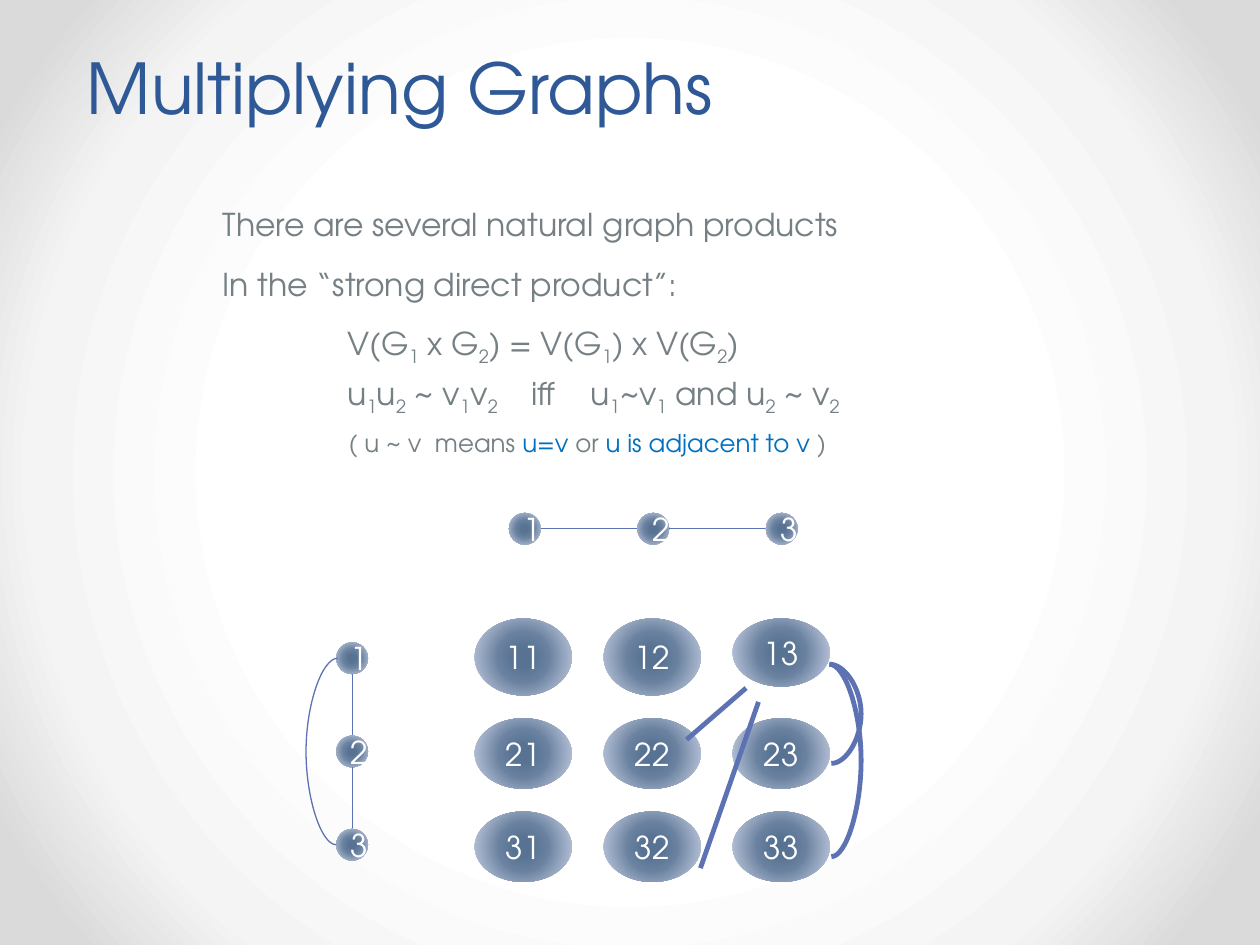
import pptx
import pptx.util
import pptx.dml.color
import pptx.enum.shapes
import pptx.enum.text
import pptx.oxml.ns
from lxml import etree
from pptx.util import Cm, Pt

qn = pptx.oxml.ns.qn
SHAPE = pptx.enum.shapes.MSO_SHAPE
CONNECTOR = pptx.enum.shapes.MSO_CONNECTOR
ALIGN = pptx.enum.text.PP_ALIGN
ANCHOR = pptx.enum.text.MSO_ANCHOR

FONT = "TeX Gyre Adventor"
COLORS = {"title": "2F5897", "text": "758085", "accent": "0070C0",
          "edge": "5C72B2", "node": "FFFFFF"}
BACKGROUND = [(50, "FFFFFF"), (76, "F4F4F4"), (92, "DADADA")]
NODE = [(15, "577293"), (40, "69819F"), (100, "CFD6E9")]


def rgb(name):
    return pptx.dml.color.RGBColor.from_string(COLORS[name])


class Deck:
    """Style of the deck and its current slide."""

    def __init__(self, s):
        self.s = s

    def radial(self, fill, element, stops):
        """Fill with a circular gradient that starts at the centre."""
        fill.gradient()
        grad = next(element.iter(qn("a:gradFill")))
        for child in list(grad):
            grad.remove(child)
        gs_list = etree.SubElement(grad, qn("a:gsLst"))
        for pos, color in stops:
            gs = etree.SubElement(gs_list, qn("a:gs"), pos=str(pos * 1000))
            etree.SubElement(gs, qn("a:srgbClr"), val=color)
        circle = etree.SubElement(grad, qn("a:path"), path="circle")
        etree.SubElement(circle, qn("a:fillToRect"),
                         dict.fromkeys("ltrb", "50000"))

    def font(self, p, size, color):
        p.font.name = FONT
        p.font.size = Pt(size)
        p.font.color.rgb = rgb(color)

    def title(self, text, x, y, w, h):
        sp = self.s.shapes.title
        sp.left, sp.top, sp.width, sp.height = Cm(x), Cm(y), Cm(w), Cm(h)
        tf = sp.text_frame
        tf.text = text
        tf.auto_size = pptx.enum.text.MSO_AUTO_SIZE.NONE
        tf.vertical_anchor = ANCHOR.BOTTOM
        p = tf.paragraphs[0]
        p.alignment = ALIGN.CENTER
        p.line_spacing = Pt(58)
        self.font(p, 40, "title")

    def text(self, text, x, y, w, h=1.02, size=18, accent=False, tabs=()):
        """One line; parts between underscores are subscripts or accented."""
        sp = self.s.shapes.add_textbox(Cm(x), Cm(y), Cm(w), Cm(h))
        sp.text_frame.word_wrap = False
        p = sp.text_frame.paragraphs[0]
        self.font(p, size, "text")
        for i, part in enumerate(text.split("_")):
            r = p.add_run()
            r.text = part
            if i % 2 and accent:
                r.font.color.rgb = rgb("accent")
            elif i % 2:
                r._r.get_or_add_rPr().set("baseline", "-25000")
        if tabs:
            tab_list = etree.Element(qn("a:tabLst"))
            for pos in tabs:
                etree.SubElement(tab_list, qn("a:tab"), pos=str(Cm(pos)), algn="l")
            p._p.get_or_add_pPr().insert(0, tab_list)

    def node(self, label, x, y, w, h):
        sp = self.s.shapes.add_shape(SHAPE.OVAL, Cm(x), Cm(y), Cm(w), Cm(h))
        sp.shadow.inherit = False
        self.radial(sp.fill, sp.element, NODE)
        sp.line.fill.background()
        tf = sp.text_frame
        tf.text = label
        tf.vertical_anchor = ANCHOR.MIDDLE
        p = tf.paragraphs[0]
        p.alignment = ALIGN.CENTER
        self.font(p, 18, "node")

    def edge(self, x1, y1, x2, y2, width=0.75, bulge=None):
        """Straight edge, or an arc that reaches out sideways by bulge."""
        kind = CONNECTOR.CURVE if bulge else CONNECTOR.STRAIGHT
        c = self.s.shapes.add_connector(kind, Cm(x1), Cm(y1), Cm(x2), Cm(y2))
        c.line.color.rgb = rgb("edge")
        c.line.width = Pt(width)
        etree.SubElement(c.element.spPr, qn("a:effectLst"))
        if bulge:
            adjust = round(bulge / abs(x2 - x1) * 100000)
            guides = next(c.element.iter(qn("a:avLst")))
            etree.SubElement(guides, qn("a:gd"), name="adj1", fmla=f"val {adjust}")


def main():
    prs = pptx.Presentation()
    prs.slide_width, prs.slide_height = Cm(25.4), Cm(19.05)
    s = prs.slides.add_slide(prs.slide_layouts[5])
    deck = Deck(s)
    deck.radial(s.background.fill, s.element, BACKGROUND)

    # Title and definitions
    deck.title("Multiplying Graphs ", 0, 0, 16.51, 2.72)
    deck.text("There are several natural graph products", 4.24, 4.01, 13.18)
    deck.text("In the “strong direct product”:", 4.24, 5.21, 10.11)
    deck.text("V(G_1_ x G_2_) = V(G_1_) x V(G_2_)", 6.76, 6.4, 8.89)
    deck.text("u_1_u_2_ ~ v_1_v_2_\tiff\tu_1_~v_1_ and u_2_ ~ v_2",
              6.76, 7.42, 11.02, tabs=(3.7, 4.9))
    deck.text("( u ~ v  means _u=v_ or _u is adjacent to v _)",
              6.78, 8.51, 10.16, h=0.86, size=14, accent=True)

    # Factor graphs: a path across the top, a triangle down the left
    d = 0.64
    path_x, path_y, path_step = 10.26, 10.34, 2.59
    tri_x, tri_y, tri_step = 6.78, 12.95, 1.88
    for i in range(3):
        x, y = path_x + i * path_step, tri_y + i * tri_step
        deck.node(str(i + 1), x, path_y, d, d)
        deck.node(str(i + 1), tri_x, y, d, d)
        if i < 2:
            deck.edge(x + d, path_y + d / 2, x + path_step, path_y + d / 2)
            deck.edge(tri_x + d / 2, y + d, tri_x + d / 2, y + tri_step)
    deck.edge(tri_x + 0.03, tri_y + d / 2,
              tri_x, tri_y + 2 * tri_step + d / 2, bulge=0.64)

    # Product graph
    for row, (y, h) in enumerate([(12.47, 1.55), (14.48, 1.42), (16.36, 1.42)], 1):
        for col in range(1, 4):
            height = 1.37 if (row, col) == (1, 3) else h
            deck.node(f"{row}{col}", 9.57 + (col - 1) * 2.6, y, 1.96, height)

    # Edges from node 13
    deck.edge(15.04, 13.87, 13.84, 14.91, 2.75)
    deck.edge(15.29, 14.15, 14.12, 17.5, 2.75)
    for end_y in (17.27, 15.39):
        deck.edge(16.72, 13.39, 16.76, end_y, 2.75, bulge=0.64)

    prs.save("out.pptx")


if __name__ == "__main__":
    main()
